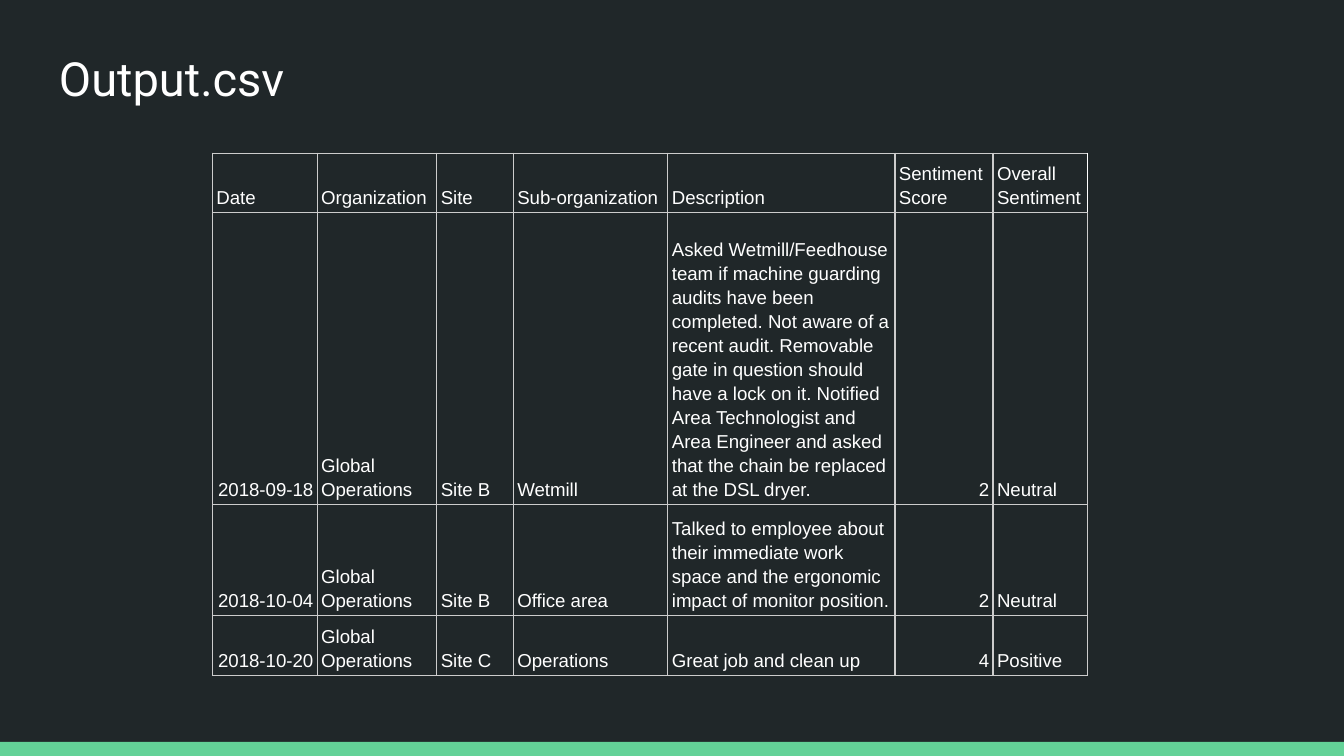
from lxml import etree
from pptx import Presentation
from pptx.dml.color import RGBColor
from pptx.enum import shapes, text
from pptx.oxml import ns
from pptx.util import Inches, Pt

DARK = RGBColor(0x20, 0x27, 0x29)
GREEN = RGBColor(0x63, 0xD2, 0x97)
WHITE = RGBColor(0xFF, 0xFF, 0xFF)
GREY = RGBColor(0xCC, 0xCC, 0xCC)

COL_WIDTHS = [0.78, 0.89, 0.57, 1.15, 1.69, 0.73, 0.7]
ROW_HEIGHTS = [0.43, 2.11, 0.8, 0.43]
RIGHT_ALIGNED = {0, 5}  # date and score columns
ROWS = [
    ["Date", "Organization", "Site", "Sub-organization", "Description",
     "Sentiment Score", "Overall Sentiment"],
    ["2018-09-18", "Global Operations", "Site B", "Wetmill",
     "Asked Wetmill/Feedhouse team if machine guarding audits have been "
     "completed. Not aware of a recent audit. Removable gate in question "
     "should have a lock on it. Notified Area Technologist and Area Engineer "
     "and asked that the chain be replaced at the DSL dryer.",
     "2", "Neutral"],
    ["2018-10-04", "Global Operations", "Site B", "Office area",
     "Talked to employee about their immediate work space and the ergonomic "
     "impact of monitor position.",
     "2", "Neutral"],
    ["2018-10-20", "Global Operations", "Site C", "Operations",
     "Great job and clean up", "4", "Positive"],
]


def set_borders(cell, colors):
    """Draw 0.75 pt borders; colors are in the order left, right, top, bottom."""
    tcPr = cell._tc.get_or_add_tcPr()
    for i, (side, color) in enumerate(zip("LRTB", colors)):
        ln = etree.Element(ns.qn(f"a:ln{side}"), w=str(Pt(0.75)))
        fill = etree.SubElement(ln, ns.qn("a:solidFill"))
        etree.SubElement(fill, ns.qn("a:srgbClr"), val=str(color))
        tcPr.insert(i, ln)


prs = Presentation()
prs.slide_width = Inches(10)
prs.slide_height = prs.slide_width * 9 // 16
s = prs.slides.add_slide(prs.slide_layouts[6])
s.background.fill.solid()
s.background.fill.fore_color.rgb = DARK

# Bottom band
band_top = Inches(5.52)
band = s.shapes.add_shape(shapes.MSO_SHAPE.RECTANGLE, Inches(0), band_top,
                          prs.slide_width, prs.slide_height - band_top)
band.shadow.inherit = False
band.fill.solid()
band.fill.fore_color.rgb = GREEN
band.line.fill.background()

# Title
title = s.shapes.add_textbox(Inches(0.34), Inches(0.27), Inches(9.32), Inches(0.63))
tf = title.text_frame
tf.word_wrap = True
tf.margin_left = tf.margin_right = tf.margin_top = tf.margin_bottom = Inches(0.1)
p = tf.paragraphs[0]
p.text = "Output.csv"
p.font.name, p.font.size = "Roboto", Pt(25.2)
p.font.color.rgb = WHITE

# Table
frame = s.shapes.add_table(len(ROWS), len(COL_WIDTHS), Inches(1.58), Inches(1.14),
                           Inches(sum(COL_WIDTHS)), Inches(sum(ROW_HEIGHTS)))
table = frame.table
table.first_row = table.horz_banding = False
for col, width in zip(table.columns, COL_WIDTHS):
    col.width = Inches(width)
for row, height in zip(table.rows, ROW_HEIGHTS):
    row.height = Inches(height)
# A frame smaller than its rows keeps the row heights from being stretched
frame.width = frame.height = Inches(3.28)

for i, values in enumerate(ROWS):
    for j, value in enumerate(values):
        cell = table.cell(i, j)
        cell.fill.background()
        cell.vertical_anchor = text.MSO_ANCHOR.BOTTOM
        cell.margin_left = cell.margin_right = Inches(0.03)
        cell.margin_top = cell.margin_bottom = Inches(0.03)
        p = cell.text_frame.paragraphs[0]
        p.text = value
        p.line_spacing = 1.15
        if i > 0 and j in RIGHT_ALIGNED:
            p.alignment = text.PP_ALIGN.RIGHT
        p.font.name, p.font.size = "Arial", Pt(10)
        p.font.color.rgb = WHITE
        top_right = i == 0 and j == len(values) - 1
        set_borders(cell, [GREY, WHITE if top_right else GREY, GREY, GREY])

prs.save("out.pptx")
